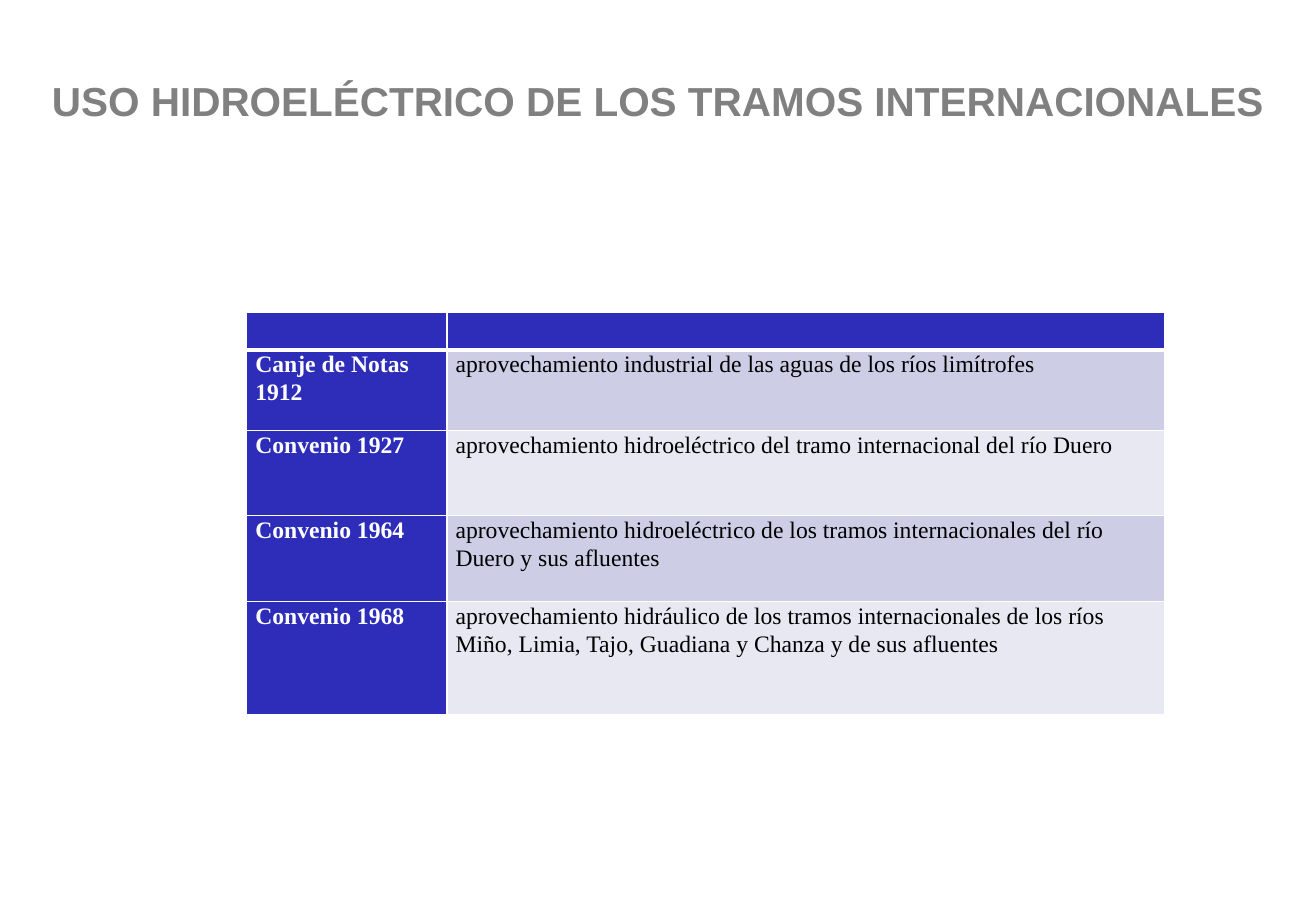
from dataclasses import dataclass

from lxml.etree import SubElement
from pptx import Presentation
from pptx.dml.color import RGBColor
from pptx.enum.text import MSO_ANCHOR, PP_ALIGN
from pptx.oxml.ns import qn
from pptx.slide import Slide
from pptx.table import _Cell
from pptx.text.text import _Paragraph
from pptx.util import Cm, Pt

COLORS = {
    "title": "808080",
    "blue": "2D2DB9",
    "dark_band": "CDCDE6",
    "light_band": "E8E8F3",
    "white": "FFFFFF",
    "black": "000000",
}
TITLE_FORMAT = {"name": "Arial", "size": Pt(24), "bold": True}
LABEL_FORMAT = {"name": "Times New Roman", "size": Pt(14), "bold": True}
USE_FORMAT = LABEL_FORMAT | {"bold": False}
CELL_MARGINS = {
    "margin_left": Cm(0.18),
    "margin_right": Cm(0.18),
    "margin_top": 0,
    "margin_bottom": 0,
}
COLUMN_WIDTHS = (4.19, 15.01)
HEADER_HEIGHT = 0.79


@dataclass(frozen=True)
class Agreement:
    label: str
    use: str
    height: float


AGREEMENTS = (
    Agreement("Canje de Notas 1912",
              "aprovechamiento industrial de las aguas de los ríos limítrofes", 1.68),
    Agreement("Convenio 1927",
              "aprovechamiento hidroeléctrico del tramo internacional del río Duero", 1.78),
    Agreement("Convenio 1964",
              "aprovechamiento hidroeléctrico de los tramos internacionales del río "
              "Duero y sus afluentes", 1.8),
    Agreement("Convenio 1968",
              "aprovechamiento hidráulico de los tramos internacionales de los ríos "
              "Miño, Limia, Tajo, Guadiana y Chanza y de sus afluentes", 2.36),
)


def set_attributes(target: object, values: dict) -> None:
    for name, value in values.items():
        setattr(target, name, value)


def write_text(paragraph: _Paragraph, text: str, font_format: dict, color: str) -> None:
    run = paragraph.add_run()
    run.text = text
    set_attributes(run.font, font_format)
    run.font.color.rgb = RGBColor.from_string(COLORS[color])


def style_cell(cell: _Cell, fill: str, bottom_width: float = 1) -> None:
    set_attributes(cell, CELL_MARGINS)
    # Borders come before the fill in the cell properties
    properties = cell._tc.get_or_add_tcPr()
    for side, width in {"L": 1, "R": 1, "T": 1, "B": bottom_width}.items():
        line = SubElement(properties, qn(f"a:ln{side}"), w=str(Pt(width)))
        line_fill = SubElement(line, qn("a:solidFill"))
        SubElement(line_fill, qn("a:srgbClr"), val=COLORS["white"])
    cell.fill.solid()
    cell.fill.fore_color.rgb = RGBColor.from_string(COLORS[fill])


def fill_cell(cell: _Cell, text: str, font_format: dict, color: str, fill: str) -> None:
    style_cell(cell, fill)
    paragraph = cell.text_frame.paragraphs[0]
    paragraph.line_spacing = 1.07
    write_text(paragraph, text, font_format, color)


def add_title(slide: Slide) -> None:
    title = slide.shapes.add_textbox(Cm(0.76), Cm(0.51), Cm(26.01), Cm(3.18))
    set_attributes(title.text_frame,
                   {"word_wrap": True, "vertical_anchor": MSO_ANCHOR.MIDDLE})
    paragraph = title.text_frame.paragraphs[0]
    paragraph.alignment = PP_ALIGN.CENTER
    write_text(paragraph, "USO HIDROELÉCTRICO DE LOS TRAMOS INTERNACIONALES",
               TITLE_FORMAT, "title")


def add_agreements(slide: Slide) -> None:
    heights = (HEADER_HEIGHT, *(agreement.height for agreement in AGREEMENTS))
    table = slide.shapes.add_table(
        len(heights), len(COLUMN_WIDTHS), Cm(5.16), Cm(6.53),
        Cm(sum(COLUMN_WIDTHS)), Cm(sum(heights))).table
    table.first_col = True
    for column, width in zip(table.columns, COLUMN_WIDTHS):
        column.width = Cm(width)
    for row, height in zip(table.rows, heights):
        row.height = Cm(height)

    # Empty header row with a thick lower border
    for cell in table.rows[0].cells:
        style_cell(cell, "blue", bottom_width=3)

    # One row per agreement, in alternating bands
    for index, agreement in enumerate(AGREEMENTS):
        label_cell, use_cell = table.rows[index + 1].cells
        band = "light_band" if index % 2 else "dark_band"
        fill_cell(label_cell, agreement.label, LABEL_FORMAT, "white", "blue")
        fill_cell(use_cell, agreement.use, USE_FORMAT, "black", band)


def main() -> None:
    presentation = Presentation()
    set_attributes(presentation, {"slide_width": Cm(27.53), "slide_height": Cm(19.05)})
    slide = presentation.slides.add_slide(presentation.slide_layouts[6])
    add_title(slide)
    add_agreements(slide)
    presentation.save("out.pptx")


if __name__ == "__main__":
    main()
